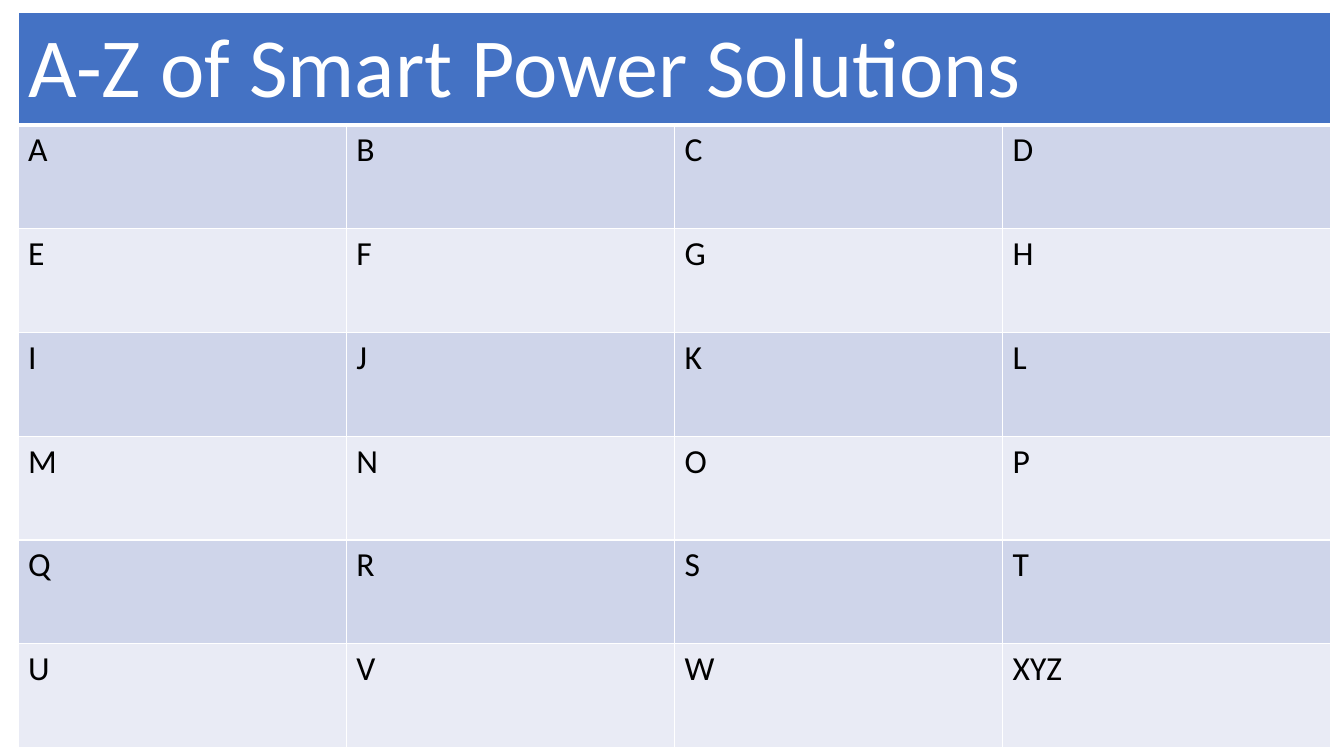
from lxml.etree import SubElement
from pptx import Presentation
from pptx.dml.color import RGBColor as RGB
from pptx.oxml.ns import qn
from pptx.util import Inches, Pt

WHITE = RGB(0xFF, 0xFF, 0xFF)
BLACK = RGB(0, 0, 0)
BLUE = RGB(0x44, 0x72, 0xC4)
BANDS = [RGB(0xCF, 0xD5, 0xEA), RGB(0xE9, 0xEB, 0xF5)]

TITLE = "A-Z of Smart Power Solutions"
ROWS = ["A B C D", "E F G H", "I J K L", "M N O P", "Q R S T", "U V W XYZ"]
COLS = 4
HEAD = {"name": "Calibri", "size": Pt(60), "bold": False}
BODY = {"name": "Calibri", "size": Pt(24), "bold": False}


def edge(cell, top=1, bottom=1):
    """Draw white cell borders, with widths in points."""
    props = cell._tc.get_or_add_tcPr()
    for side, width in {"L": 1, "R": 1, "T": top, "B": bottom}.items():
        line = SubElement(props, qn(f"a:ln{side}"), w=str(Pt(width)))
        fill = SubElement(line, qn("a:solidFill"))
        SubElement(fill, qn("a:srgbClr"), val=str(WHITE))


def write(cell, text, form, ink, fill):
    cell.fill.solid()
    cell.fill.fore_color.rgb = fill
    cell.text = text
    font = cell.text_frame.paragraphs[0].runs[0].font
    for key, value in form.items():
        setattr(font, key, value)
    font.color.rgb = ink


def add_index(slide, left, top, width, height, head):
    """Place the title row and the letter grid in the given box."""
    frame = slide.shapes.add_table(
        len(ROWS) + 1, COLS,
        Inches(left), Inches(top), Inches(width), Inches(height))
    table = frame.table
    for col in table.columns:
        col.width = Inches(width / COLS)
    for row in table.rows:
        row.height = Inches((height - head) / len(ROWS))
    table.rows[0].height = Inches(head)

    for col in range(COLS):
        edge(table.cell(0, col), bottom=3)
    title = table.cell(0, 0)
    title.merge(table.cell(0, COLS - 1))
    write(title, TITLE, HEAD, WHITE, BLUE)

    for row, line in enumerate(ROWS, 1):
        for col, text in enumerate(line.split()):
            cell = table.cell(row, col)
            edge(cell, top=3 if row == 1 else 1)
            write(cell, text, BODY, BLACK, BANDS[(row - 1) % 2])


def main():
    deck = Presentation()
    deck.slide_width, deck.slide_height = Inches(13.33), Inches(7.5)
    slide = deck.slides.add_slide(deck.slide_layouts[6])
    add_index(slide, 0.18, 0.12, 13.02, 7.29, head=1.11)
    deck.save("out.pptx")


if __name__ == "__main__":
    main()
